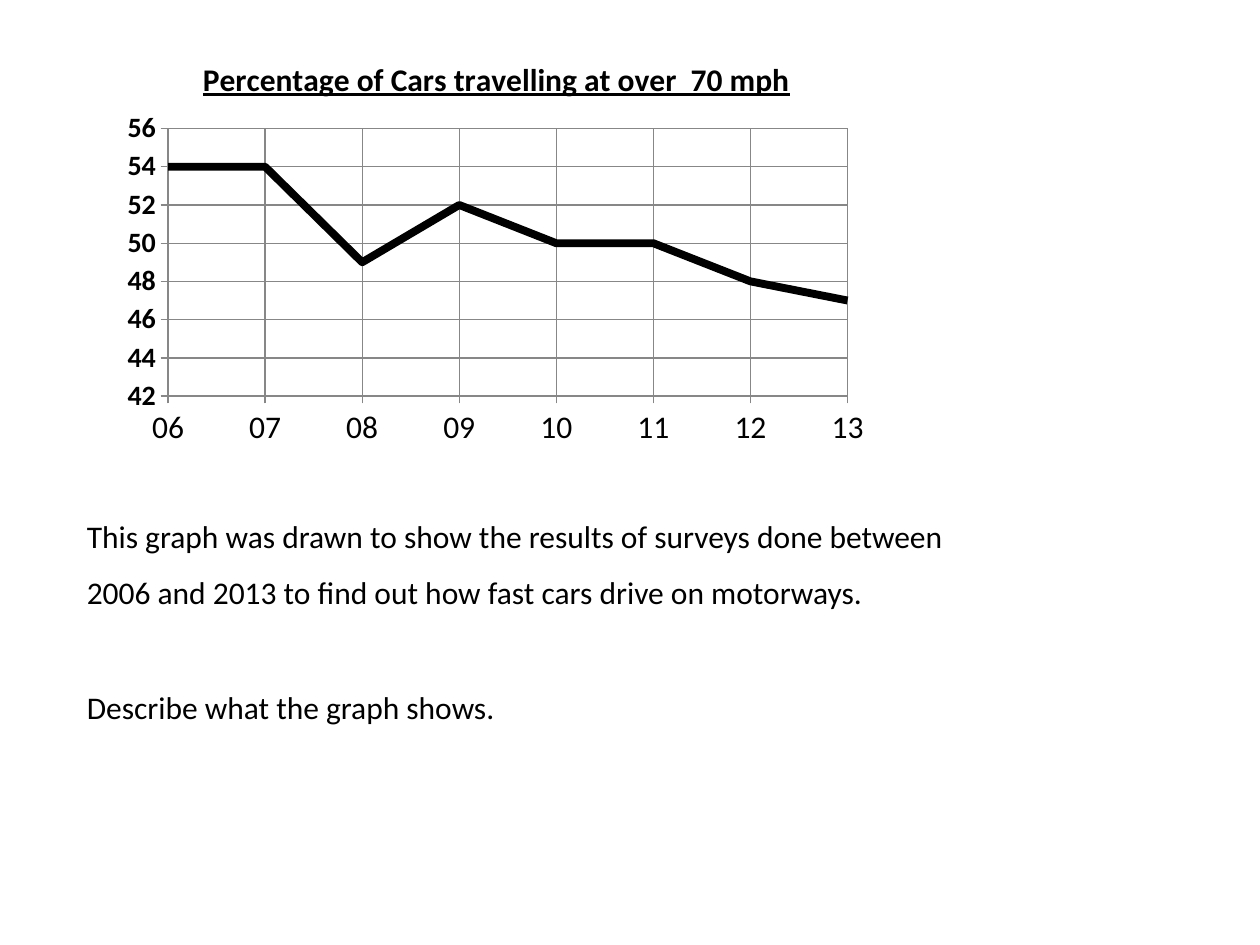
from dataclasses import dataclass

from lxml.etree import SubElement
from pptx import Presentation
from pptx.chart.data import CategoryChartData
from pptx.dml.color import RGBColor
from pptx.enum.chart import XL_CHART_TYPE as ChartType
from pptx.enum.chart import XL_MARKER_STYLE as Marker
from pptx.enum.chart import XL_TICK_MARK as Tick
from pptx.enum.text import MSO_AUTO_SIZE as AutoSize
from pptx.oxml.ns import qn
from pptx.util import Pt


@dataclass(frozen=True)
class Theme:
    font: str = "Calibri"
    ink: RGBColor = RGBColor(0, 0, 0)
    grid: RGBColor = RGBColor(0x87, 0x87, 0x87)
    body: Pt = Pt(18)
    scale: Pt = Pt(16)
    grid_line: Pt = Pt(0.75)
    data_line: Pt = Pt(4.5)


THEME = Theme()
TITLE = "Percentage of Cars travelling at over  70 mph"
YEARS = ["06", "07", "08", "09", "10", "11", "12", "13"]
PERCENTAGES = [54, 54, 49, 52, 50, 50, 48, 47]
PARAGRAPHS = [
    "This graph was drawn to show the results of surveys done between "
    "2006 and 2013 to find out how fast cars drive on motorways.",
    "Describe what the graph shows.",
]


def style_font(font, size, bold=False):
    font.name = THEME.font
    font.size = size
    font.bold = bold
    font.color.rgb = THEME.ink


def style_line(line, color, width):
    line.color.rgb = color
    line.width = width


def style_axis(axis, size, bold=False):
    axis.has_major_gridlines = True
    axis.major_tick_mark = Tick.OUTSIDE
    axis.minor_tick_mark = Tick.NONE
    style_font(axis.tick_labels.font, size, bold)
    for line in (axis.format.line, axis.major_gridlines.format.line):
        style_line(line, THEME.grid, THEME.grid_line)


def place_plot(chart, x, y, w, h):
    plot_area = chart.element.find(".//" + qn("c:plotArea"))
    layout = plot_area.find(qn("c:layout"))
    if layout is None:
        layout = SubElement(plot_area, qn("c:layout"))
        plot_area.insert(0, layout)
    manual = SubElement(layout, qn("c:manualLayout"))
    settings = {"layoutTarget": "inner", "xMode": "edge", "yMode": "edge",
                "x": x, "y": y, "w": w, "h": h}
    for name, value in settings.items():
        SubElement(manual, qn("c:" + name)).set("val", str(value))


def start_line_on_axis(axis):
    value_axis = axis._element
    cross = value_axis.find(qn("c:crossBetween"))
    if cross is None:
        cross = SubElement(value_axis, qn("c:crossBetween"))
        value_axis.find(qn("c:crosses")).addnext(cross)
    cross.set("val", "midCat")


def add_chart_title(chart):
    chart.has_title = True
    tf = chart.chart_title.text_frame
    tf.text = TITLE
    font = tf.paragraphs[0].runs[0].font
    style_font(font, THEME.body, bold=True)
    font.underline = True
    chart.chart_title.include_in_layout = False


def add_speed_chart(slide):
    data = CategoryChartData()
    data.categories = YEARS
    data.add_series("Series 1", PERCENTAGES)
    chart = slide.shapes.add_chart(
        ChartType.LINE_STACKED, Pt(65.5), Pt(20.9), Pt(436.3), Pt(239), data
    ).chart
    chart.has_legend = False
    style_font(chart.font, THEME.body)
    add_chart_title(chart)
    style_axis(chart.category_axis, THEME.body)
    axis = chart.value_axis
    style_axis(axis, THEME.scale, bold=True)
    axis.minimum_scale, axis.maximum_scale, axis.major_unit = 42, 56, 2
    start_line_on_axis(axis)
    series = chart.plots[0].series[0]
    series.smooth = False
    series.marker.style = Marker.NONE
    style_line(series.format.line, THEME.ink, THEME.data_line)
    place_plot(chart, 0.07, 0.22, 0.89, 0.64)


def add_question(slide):
    box = slide.shapes.add_textbox(Pt(42.5), Pt(280.8), Pt(510.5), Pt(138.2))
    tf = box.text_frame
    tf.word_wrap = True
    tf.auto_size = AutoSize.SHAPE_TO_FIT_TEXT
    for i, text in enumerate(PARAGRAPHS):
        p = tf.add_paragraph() if i else tf.paragraphs[0]
        p.text = text
        p.line_spacing = 1.5
        p.space_before = Pt(33 if i else 0)
        style_font(p.runs[0].font, THEME.body)


def main():
    prs = Presentation()
    prs.slide_width, prs.slide_height = Pt(720), Pt(540)
    slide = prs.slides.add_slide(prs.slide_layouts[6])
    add_speed_chart(slide)
    add_question(slide)
    prs.save("out.pptx")


if __name__ == "__main__":
    main()
